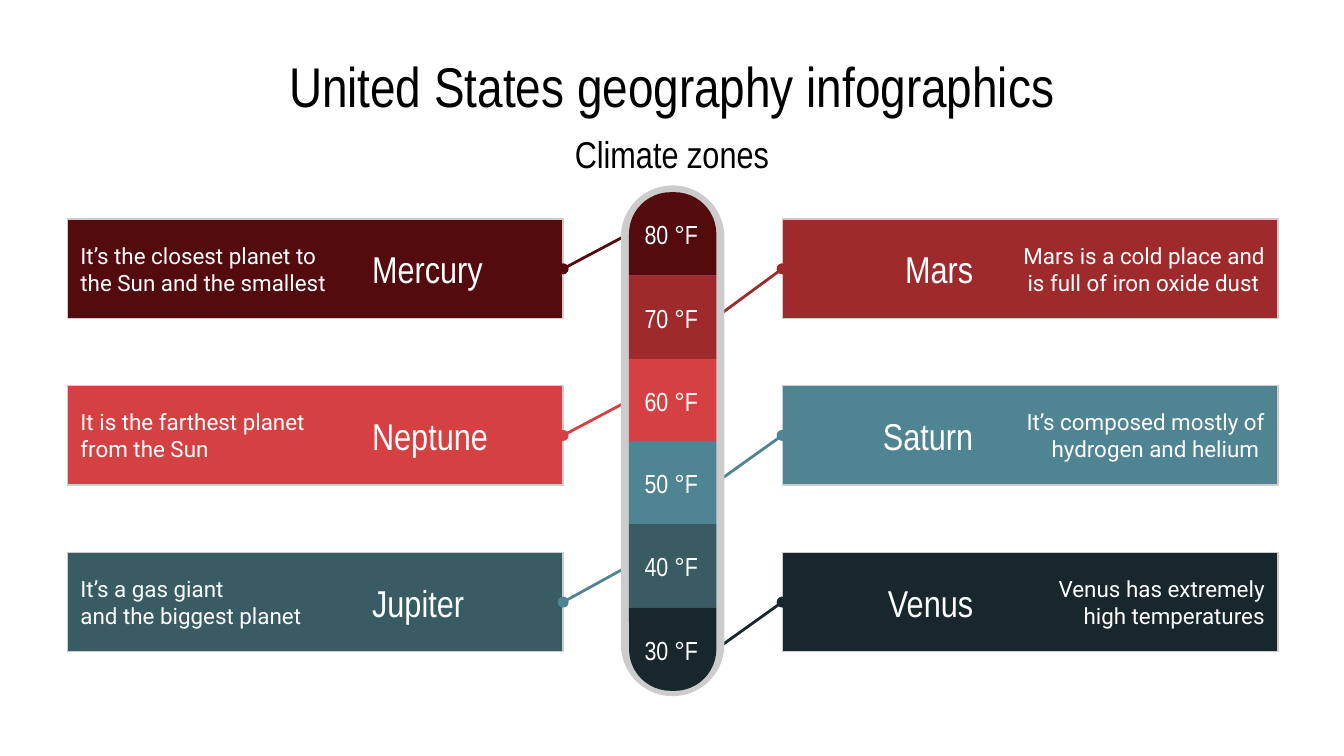
from dataclasses import dataclass

from lxml import etree
from pptx import Presentation
from pptx import util as u
from pptx.dml.color import RGBColor
from pptx.enum import shapes, text
from pptx.oxml.ns import qn

PX = 9144  # 100 px to the inch

MAROON = RGBColor(0x54, 0x0B, 0x0E)
CRIMSON = RGBColor(0x9E, 0x2A, 0x2B)
RED = RGBColor(0xD5, 0x41, 0x42)
TEAL = RGBColor(0x4F, 0x84, 0x92)
SLATE = RGBColor(0x38, 0x5B, 0x64)
NAVY = RGBColor(0x17, 0x27, 0x2B)
GREY = RGBColor(0xCC, 0xCC, 0xCC)
WHITE = RGBColor(0xFF, 0xFF, 0xFF)
BLACK = RGBColor(0, 0, 0)

HEAD, BODY = "Arial Narrow", "Roboto"
SHAPE, ALIGN = shapes.MSO_SHAPE, text.PP_ALIGN

# Thermometer scale, from hot to cold
ZONE_COLORS = [MAROON, CRIMSON, RED, TEAL, SLATE, NAVY]
SCALE_TOP, SCALE_H = 143, 371
SCALE_LEFT, SCALE_W = 468, 65

# Cards
CARD_TOP, CARD_W, CARD_H, CARD_PITCH = 163, 369, 74, 124
LEFT_X, RIGHT_X = 50, 582
NAME_W, NOTE_W, TEXT_H = 152, 208, 60


@dataclass
class Card:
    name: str
    note: str
    fill: RGBColor
    link: RGBColor


CARDS = [
    Card("Mercury", "It’s the closest planet to the Sun and the smallest", MAROON, MAROON),
    Card("Mars", "Mars is a cold place and is full of iron oxide dust ", CRIMSON, CRIMSON),
    Card("Neptune", "It is the farthest planet from the Sun", RED, RED),
    Card("Saturn", "It’s composed mostly of hydrogen and helium ", TEAL, TEAL),
    Card("Jupiter", "It’s a gas giant\nand the biggest planet", SLATE, TEAL),
    Card("Venus", "Venus has extremely high temperatures", NAVY, NAVY),
]


def px(*values: int) -> list[u.Emu]:
    return [u.Emu(v * PX) for v in values]


def zone_y(step: float) -> int:
    """Height on the scale, counted in zones from its top."""
    return round(SCALE_TOP + SCALE_H * step / len(ZONE_COLORS))


def write(sp, words: str, size: int, font: str, color: RGBColor, align,
          anchor=text.MSO_ANCHOR.MIDDLE) -> None:
    tf = sp.text_frame
    tf.word_wrap = True
    tf.auto_size = text.MSO_AUTO_SIZE.NONE
    tf.vertical_anchor = anchor
    tf.margin_left = tf.margin_right = tf.margin_top = tf.margin_bottom = u.Inches(0.1)
    p = tf.paragraphs[0]
    p.text = words
    p.alignment = align
    p.font.size, p.font.name = u.Pt(size), font
    p.font.color.rgb = color


def add_text(s, box: tuple, words: str, size: int, font: str, color: RGBColor, align) -> None:
    write(s.shapes.add_textbox(*px(*box)), words, size, font, color, align)


def add_block(s, kind, box: tuple, fill: RGBColor, outline: RGBColor | None = None):
    sp = s.shapes.add_shape(kind, *px(*box))
    sp.shadow.inherit = False
    sp.fill.solid()
    sp.fill.fore_color.rgb = fill
    if outline is None:
        sp.line.fill.background()
    else:
        sp.line.color.rgb = outline
        sp.line.width = u.Pt(0.75)
    return sp


def add_link(s, start: tuple, end: tuple, color: RGBColor) -> None:
    """Line with a dot at its start."""
    cx = s.shapes.add_connector(shapes.MSO_CONNECTOR.STRAIGHT, *px(*start, *end))
    cx.line.color.rgb = color
    cx.line.width = u.Pt(1.5)
    etree.SubElement(cx.line._get_or_add_ln(), qn("a:headEnd"), type="oval")
    etree.SubElement(cx._element.spPr, qn("a:effectLst"))


def add_card(s, index: int, card: Card) -> None:
    row, on_right = divmod(index, 2)
    top = CARD_TOP + row * CARD_PITCH
    if on_right:
        left, align = RIGHT_X, ALIGN.RIGHT
        name_x, note_x = left, left + CARD_W - NOTE_W
        edge, scale_edge = left, SCALE_LEFT + SCALE_W
    else:
        left, align = LEFT_X, ALIGN.LEFT
        name_x, note_x = left + CARD_W - NAME_W, left
        edge, scale_edge = left + CARD_W, SCALE_LEFT
    add_block(s, SHAPE.RECTANGLE, (left, top, CARD_W, CARD_H), card.fill, GREY)
    add_text(s, (note_x, top + 7, NOTE_W, TEXT_H), card.note, 12, BODY, WHITE, align)
    add_text(s, (name_x, top + 7, NAME_W, TEXT_H), card.name, 20, HEAD, WHITE, align)
    add_link(s, (edge, top + CARD_H // 2), (scale_edge, zone_y(index + 0.5)), card.link)


def add_thermometer(s) -> None:
    tube = add_block(s, SHAPE.ROUNDED_RECTANGLE, (462, 138, 77, 380), GREY)
    tube.adjustments[0] = 0.5
    last = len(ZONE_COLORS) - 1
    for i, color in enumerate(ZONE_COLORS):
        top, bottom = zone_y(i), zone_y(i + 1)
        capped = i in (0, last)
        kind = SHAPE.ROUND_2_SAME_RECTANGLE if capped else SHAPE.RECTANGLE
        zone = add_block(s, kind, (SCALE_LEFT, top, SCALE_W, bottom - top), color)
        if capped:
            zone.adjustments[0] = 0.5
            zone.rotation = 180 if i == last else 0
        add_text(s, (461, zone_y(i + 0.5) - 15, 77, 31), f"{80 - 10 * i} °F",
                 14, HEAD, WHITE, ALIGN.CENTER)


def main() -> None:
    prs = Presentation()
    prs.slide_width = u.Inches(10)
    prs.slide_height = u.Emu(prs.slide_width * 9 // 16)
    s = prs.slides.add_slide(prs.slide_layouts[5])

    # Title and subtitle
    title = s.shapes.title
    title.left, title.top, title.width, title.height = px(50, 28, 900, 63)
    write(title, "United States geography infographics", 30, HEAD, BLACK,
          ALIGN.CENTER, text.MSO_ANCHOR.TOP)
    add_text(s, (211, 92, 578, 44), "Climate zones", 20, HEAD, BLACK, ALIGN.CENTER)

    # Cards with their links, then the thermometer over the link ends
    for i, card in enumerate(CARDS):
        add_card(s, i, card)
    add_thermometer(s)

    prs.save("out.pptx")


if __name__ == "__main__":
    main()
